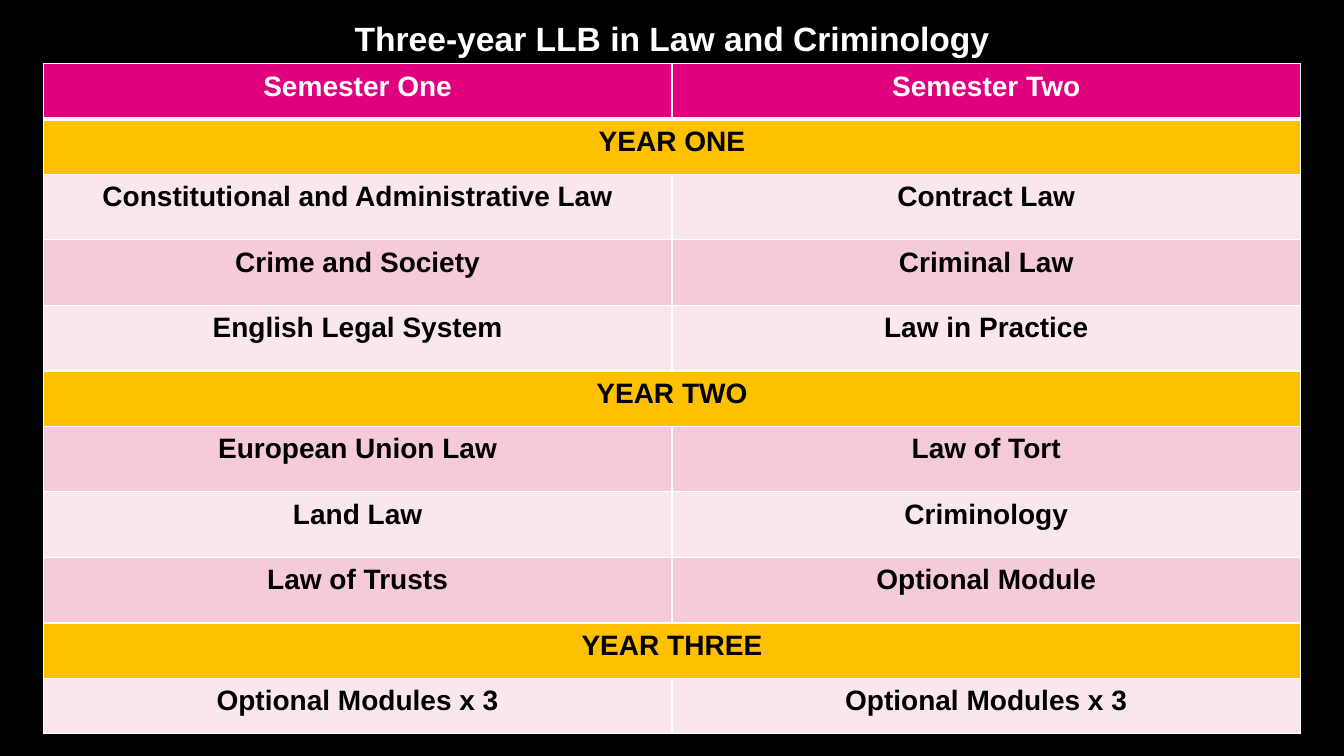
import dataclasses

import lxml.etree
import pptx
import pptx.dml.color
import pptx.enum.text
import pptx.oxml.ns
import pptx.util


@dataclasses.dataclass(frozen=True)
class Theme:
    font: str = "Arial"
    title_size: int = 24
    cell_size: int = 20
    background: str = "000000"
    light_text: str = "FFFFFF"
    dark_text: str = "000000"
    header: str = "E1007D"
    year: str = "FFC000"
    bands: tuple = ("F9E7EC", "F4CBD7")
    rule: str = "FFFFFF"


THEME = Theme()

# Grid units of 0.05 inch
SLIDE_WIDTH, SLIDE_HEIGHT = 266.6, 150
MARGIN = 8.6
CONTENT_WIDTH = SLIDE_WIDTH - 2 * MARGIN
TITLE_HEIGHT = 18
TABLE_TOP = 12.6
BANNER_HEIGHT, MODULE_HEIGHT = 11, 13

TITLE = "Three-year LLB in Law and Criminology"
SEMESTERS = ("Semester One", "Semester Two")
YEARS = {
    "YEAR ONE": [
        ("Constitutional and Administrative Law", "Contract Law"),
        ("Crime and Society", "Criminal Law"),
        ("English Legal System", "Law in Practice"),
    ],
    "YEAR TWO": [
        ("European Union Law", "Law of Tort"),
        ("Land Law", "Criminology"),
        ("Law of Trusts", "Optional Module"),
    ],
    "YEAR THREE": [("Optional Modules x 3", "Optional Modules x 3")],
}


def grid(units):
    return pptx.util.Inches(units * 0.05)


def rgb(colour):
    return pptx.dml.color.RGBColor.from_string(colour)


def write(frame, text, size, colour):
    """Write one bold, centred line and return its paragraph."""
    frame.text = text
    line = frame.paragraphs[0]
    line.alignment = pptx.enum.text.PP_ALIGN.CENTER
    for run in line.runs:
        run.font.name = THEME.font
        run.font.size = pptx.util.Pt(size)
        run.font.bold = True
        run.font.color.rgb = rgb(colour)
    return line


def add_title(slide):
    heading = slide.shapes.add_textbox(
        grid(MARGIN), 0, grid(CONTENT_WIDTH), grid(TITLE_HEIGHT))
    frame = heading.text_frame
    frame.word_wrap = True
    frame.vertical_anchor = pptx.enum.text.MSO_ANCHOR.MIDDLE
    frame.margin_left = frame.margin_right = frame.margin_top = 0
    frame.margin_bottom = grid(2.8)
    write(frame, TITLE, THEME.title_size, THEME.light_text)


def add_borders(cell, top=1, bottom=1):
    """Rule all four sides; borders must precede the fill in the XML."""
    properties = cell._tc.get_or_add_tcPr()
    widths = {"lnL": 1, "lnR": 1, "lnT": top, "lnB": bottom}
    for place, (side, width) in enumerate(widths.items()):
        border = lxml.etree.Element(
            pptx.oxml.ns.qn(f"a:{side}"), w=str(pptx.util.Pt(width)))
        fill = lxml.etree.SubElement(border, pptx.oxml.ns.qn("a:solidFill"))
        lxml.etree.SubElement(
            fill, pptx.oxml.ns.qn("a:srgbClr"), val=THEME.rule)
        properties.insert(place, border)


def fill_row(table, index, labels, fill, colour, height):
    """Fill a row; a single label spans every column."""
    table.rows[index].height = grid(height)
    cells = list(table.rows[index].cells)
    if len(labels) == 1:
        cells[0].merge(cells[-1])
    for cell in cells:
        cell.fill.solid()
        cell.fill.fore_color.rgb = rgb(fill)
        # A heavy rule separates the semester header from the years
        add_borders(cell, top=3 if index == 1 else 1,
                    bottom=3 if index == 0 else 1)
    for cell, label in zip(cells, labels):
        line = write(cell.text_frame, label, THEME.cell_size, colour)
        line.line_spacing = 1.07
        line.space_after = pptx.util.Pt(8)


def plan_rows():
    """List each row as labels, fill, text colour and height."""
    rows = [(SEMESTERS, THEME.header, THEME.light_text, BANNER_HEIGHT)]
    module_count = 0
    for year, modules in YEARS.items():
        rows.append(((year,), THEME.year, THEME.dark_text, BANNER_HEIGHT))
        # A lone module row is as low as a banner
        height = MODULE_HEIGHT if len(modules) > 1 else BANNER_HEIGHT
        for pair in modules:
            band = THEME.bands[module_count % 2]
            rows.append((pair, band, THEME.dark_text, height))
            module_count += 1
    return rows


def add_timetable(slide):
    rows = plan_rows()
    total_height = sum(row[-1] for row in rows)
    timetable = slide.shapes.add_table(
        len(rows), len(SEMESTERS), grid(MARGIN), grid(TABLE_TOP),
        grid(CONTENT_WIDTH), grid(total_height)).table
    for index, row in enumerate(rows):
        fill_row(timetable, index, *row)


def main():
    deck = pptx.Presentation()
    deck.slide_width = grid(SLIDE_WIDTH)
    deck.slide_height = grid(SLIDE_HEIGHT)
    slide = deck.slides.add_slide(deck.slide_layouts[6])
    slide.background.fill.solid()
    slide.background.fill.fore_color.rgb = rgb(THEME.background)
    add_title(slide)
    add_timetable(slide)
    deck.save("out.pptx")


if __name__ == "__main__":
    main()
